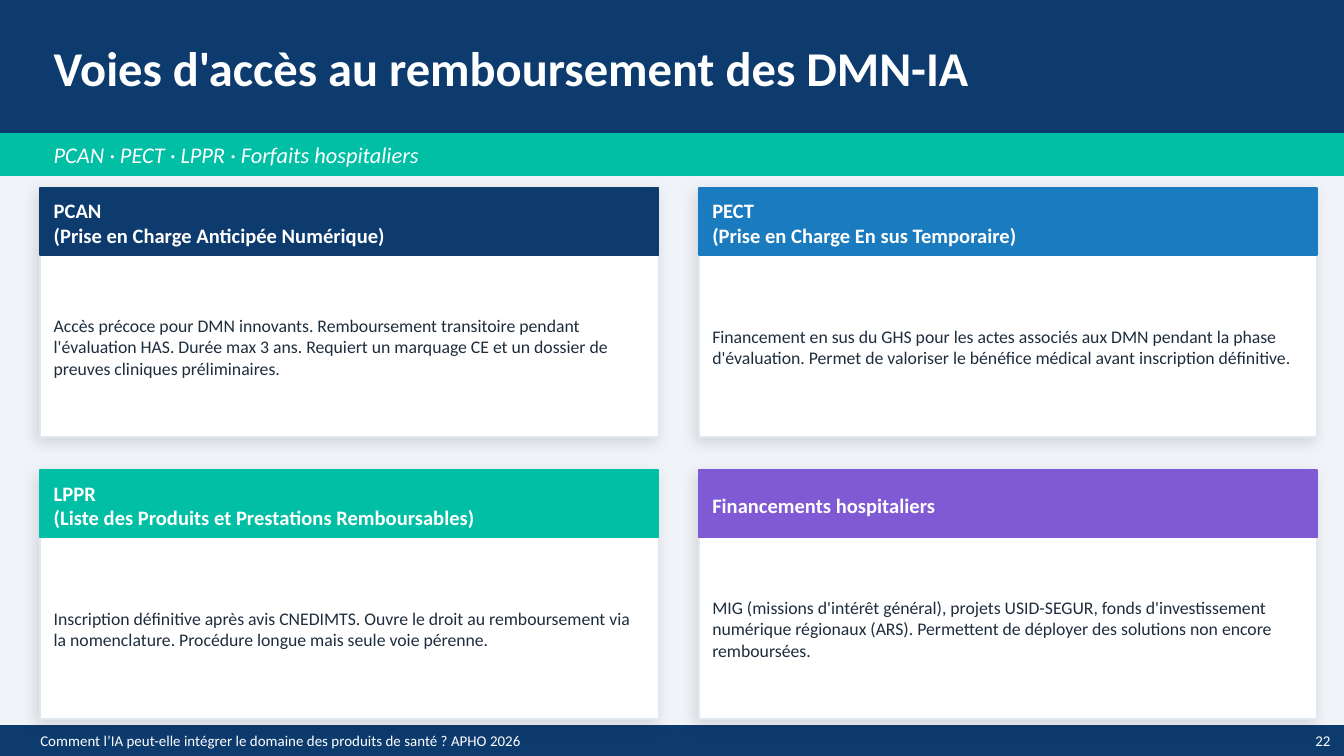
from lxml import etree
from pptx import Presentation
from pptx.dml.color import RGBColor
from pptx.enum.shapes import MSO_SHAPE
from pptx.enum.text import MSO_ANCHOR, PP_ALIGN
from pptx.oxml.ns import qn
from pptx.util import Inches, Pt

RECT = MSO_SHAPE.RECTANGLE
MIDDLE = MSO_ANCHOR.MIDDLE
LEFT, RIGHT = PP_ALIGN.LEFT, PP_ALIGN.RIGHT

FONT = "Calibri"
NAVY, TEAL, BLUE, PURPLE = "0D3B6E", "00BFA5", "1A7BBF", "805AD5"
WHITE, INK, BORDER, PAGE = "FFFFFF", "1E2D3D", "E2E8F0", "F0F4F9"

SLIDE_W = 10
SLIDE_H = SLIDE_W * 9 / 16
CARD_W, CARD_H, HEAD_H = 4.6, 1.85, 0.5
CARD_X, CARD_Y = 0.3, 1.4
STEP_X, STEP_Y = 4.9, 2.1
PAD = 0.1

# Heading lines, heading colour, body text
CARDS = [
    (["PCAN", "(Prise en Charge Anticipée Numérique)"], NAVY,
     "Accès précoce pour DMN innovants. Remboursement transitoire pendant "
     "l'évaluation HAS. Durée max 3 ans. Requiert un marquage CE et un "
     "dossier de preuves cliniques préliminaires."),
    (["PECT", "(Prise en Charge En sus Temporaire)"], BLUE,
     "Financement en sus du GHS pour les actes associés aux DMN pendant la "
     "phase d'évaluation. Permet de valoriser le bénéfice médical avant "
     "inscription définitive."),
    (["LPPR", "(Liste des Produits et Prestations Remboursables)"], TEAL,
     "Inscription définitive après avis CNEDIMTS. Ouvre le droit au "
     "remboursement via la nomenclature. Procédure longue mais seule voie "
     "pérenne."),
    (["Financements hospitaliers"], PURPLE,
     "MIG (missions d'intérêt général), projets USID-SEGUR, fonds "
     "d'investissement numérique régionaux (ARS). Permettent de déployer des "
     "solutions non encore remboursées."),
]


def rgb(value):
    return RGBColor.from_string(value)


def add_rect(slide, x, y, w, h, fill, line=None):
    sp = slide.shapes.add_shape(RECT, Inches(x), Inches(y), Inches(w), Inches(h))
    sp.shadow.inherit = False
    sp.fill.solid()
    sp.fill.fore_color.rgb = rgb(fill)
    sp.line.color.rgb = rgb(line or fill)
    sp.line.width = Pt(1)
    return sp


def add_soft_shadow(sp):
    effects = sp._element.spPr.find(qn("a:effectLst"))
    shadow = etree.SubElement(effects, qn("a:outerShdw"), blurRad=str(Pt(8)),
                              dist=str(Pt(3)), dir=str(135 * 60000),
                              algn="bl", rotWithShape="0")
    color = etree.SubElement(shadow, qn("a:srgbClr"), val="000000")
    etree.SubElement(color, qn("a:alpha"), val="12000")


def add_text(slide, x, y, w, h, lines, size, color=WHITE, bold=False,
             italic=False, align=LEFT):
    sp = slide.shapes.add_textbox(Inches(x), Inches(y), Inches(w), Inches(h))
    tf = sp.text_frame
    tf.word_wrap = True
    tf.vertical_anchor = MIDDLE
    tf.margin_left = tf.margin_right = tf.margin_top = tf.margin_bottom = 0
    for i, line in enumerate(lines):
        p = tf.paragraphs[0] if i == 0 else tf.add_paragraph()
        p.alignment = align
        r = p.add_run()
        r.text = line
        r.font.name = FONT
        r.font.size = Pt(size)
        r.font.bold = bold
        r.font.italic = italic
        r.font.color.rgb = rgb(color)


def add_header(slide, title, subtitle):
    add_rect(slide, 0, 0, SLIDE_W, 1, NAVY)
    add_text(slide, 0.4, 0, 9.2, 1, [title], 26, bold=True)
    add_rect(slide, 0, 1, SLIDE_W, 0.3, TEAL)
    add_text(slide, 0.4, 1, 9.2, 0.3, [subtitle], 12, italic=True)


def add_footer(slide, note, number):
    y = 5.4
    h = SLIDE_H - y
    add_rect(slide, 0, y, SLIDE_W, h, NAVY)
    add_text(slide, 0.3, y, 7, h, [note], 8)
    add_text(slide, 9.3, y, 0.6, h, [number], 8, align=RIGHT)


def add_card(slide, x, y, heading, color, body):
    add_soft_shadow(add_rect(slide, x, y, CARD_W, CARD_H, WHITE, BORDER))
    add_rect(slide, x, y, CARD_W, HEAD_H, color)
    text_x, text_w = x + PAD, CARD_W - 2 * PAD
    add_text(slide, text_x, y + 0.04, text_w, 0.44, heading, 11, bold=True)
    add_text(slide, text_x, y + 0.58, text_w, 1.2, [body], 9.5, color=INK)


def main():
    prs = Presentation()
    prs.slide_width, prs.slide_height = Inches(SLIDE_W), Inches(SLIDE_H)
    slide = prs.slides.add_slide(prs.slide_layouts[6])
    slide.background.fill.solid()
    slide.background.fill.fore_color.rgb = rgb(PAGE)

    # Title bands and footer
    add_header(slide, "Voies d'accès au remboursement des DMN-IA",
               "PCAN · PECT · LPPR · Forfaits hospitaliers")
    add_footer(slide, "Comment l’IA peut-elle intégrer le domaine des produits "
               "de santé ? APHO 2026", "22")

    # Two-by-two grid of cards
    for i, (heading, color, body) in enumerate(CARDS):
        row, col = divmod(i, 2)
        add_card(slide, CARD_X + col * STEP_X, CARD_Y + row * STEP_Y,
                 heading, color, body)

    prs.save("out.pptx")


if __name__ == "__main__":
    main()
